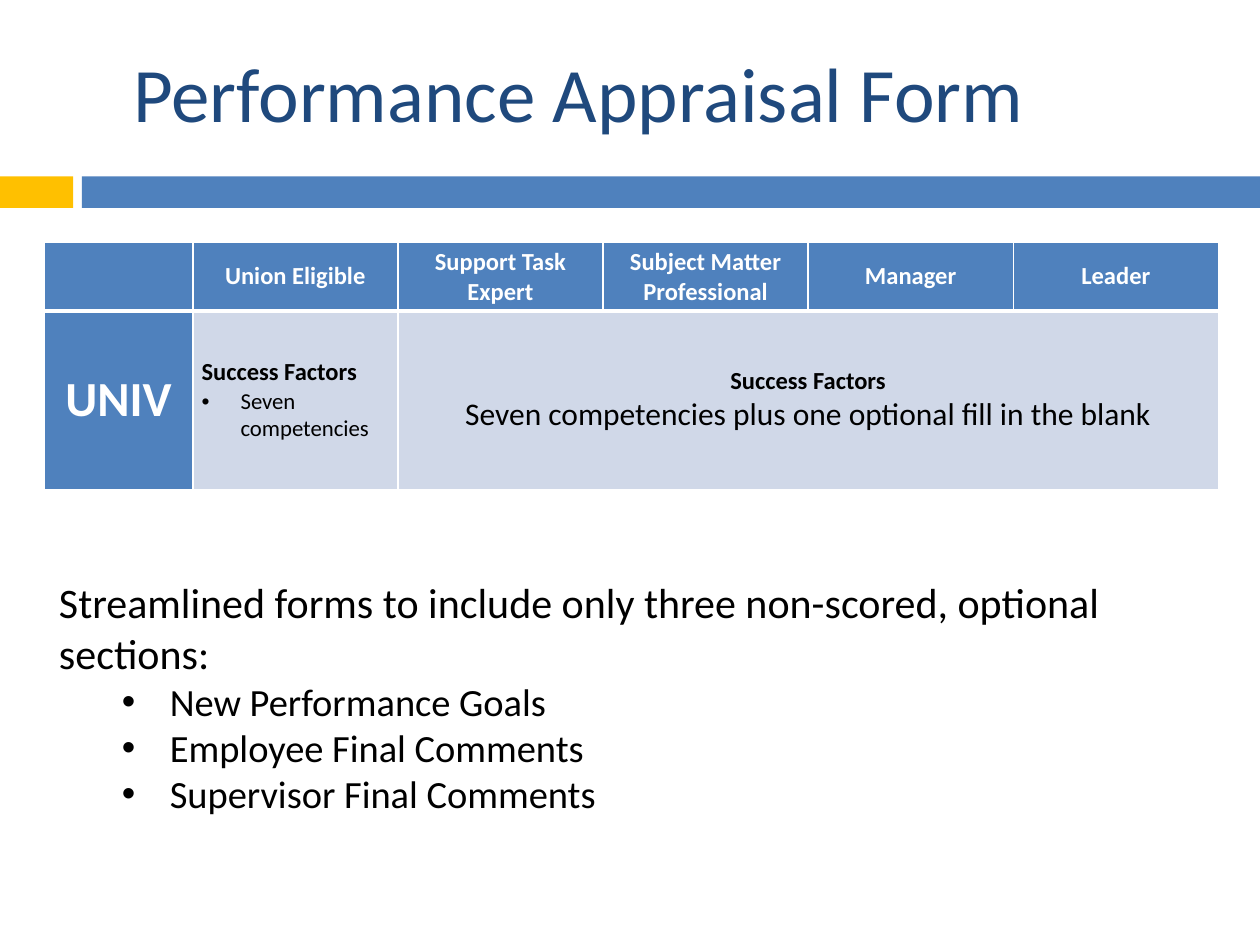
from lxml.etree import SubElement
from pptx import Presentation
from pptx.dml.color import RGBColor
from pptx.enum.shapes import MSO_SHAPE
from pptx.enum.text import MSO_ANCHOR, PP_ALIGN
from pptx.oxml import parse_xml
from pptx.oxml.ns import nsdecls, qn
from pptx.util import Inches, Pt

FONT = "Calibri"
BLUE, GOLD, NAVY, PALE = "4F81BD", "FFC000", "1F497D", "D0D8E8"
WHITE, BLACK = "FFFFFF", "000000"
HEADINGS = ["Union Eligible", "Support Task Expert", "Subject Matter Professional",
            "Manager", "Leader"]
SECTIONS = ["New Performance Goals", "Employee Final Comments", "Supervisor Final Comments"]


def color(hex_string):
    return RGBColor.from_string(hex_string)


def inches(box):
    return [Inches(length) for length in box]


def add_run(paragraph, text, size, hex_string=BLACK, bold=False):
    run = paragraph.add_run()
    run.text = text
    run.font.name = FONT
    run.font.size = Pt(size)
    run.font.bold = bold
    run.font.color.rgb = color(hex_string)


def add_bullet(paragraph, margin, hanging):
    properties = paragraph._p.get_or_add_pPr()
    properties.set("marL", str(Inches(margin)))
    properties.set("indent", str(-Inches(hanging)))
    SubElement(properties, qn("a:buFont"), typeface="Arial")
    SubElement(properties, qn("a:buChar"), char="•")


def add_bands(slide, box):
    """Gold tab and blue band, parted by a narrow gap."""
    left, top, width, height = box
    tab, gap = 0.58, 0.07
    parts = [(left, tab, GOLD), (left + tab + gap, width - tab - gap, BLUE)]
    for part_left, part_width, fill in parts:
        band = slide.shapes.add_shape(
            MSO_SHAPE.RECTANGLE, *inches((part_left, top, part_width, height)))
        band.shadow.inherit = False
        band.fill.solid()
        band.fill.fore_color.rgb = color(fill)
        band.line.fill.background()


def add_text_box(slide, box, anchor=MSO_ANCHOR.TOP):
    frame = slide.shapes.add_textbox(*inches(box)).text_frame
    frame.word_wrap = True
    frame.vertical_anchor = anchor
    return frame


def add_title(slide, box):
    frame = add_text_box(slide, box, MSO_ANCHOR.MIDDLE)
    add_run(frame.paragraphs[0], "Performance Appraisal Form", 44, NAVY)


def style_cell(cell, fill, top=1, bottom=1):
    cell.vertical_anchor = MSO_ANCHOR.MIDDLE
    cell.margin_left = cell.margin_right = Inches(0.07)
    cell.margin_top = cell.margin_bottom = Inches(0.04)
    cell.fill.solid()
    cell.fill.fore_color.rgb = color(fill)
    # Borders come before the fill in the cell properties
    properties = cell._tc.get_or_add_tcPr()
    widths = {"lnL": 1, "lnR": 1, "lnT": top, "lnB": bottom}
    for index, (side, width) in enumerate(widths.items()):
        properties.insert(index, parse_xml(
            f'<a:{side} {nsdecls("a")} w="{Pt(width)}"><a:solidFill>'
            f'<a:srgbClr val="{WHITE}"/></a:solidFill></a:{side}>'))


def add_factors_table(slide, box):
    left, top, width, height = box
    label_width, header_height = 1.18, 0.53
    count = len(HEADINGS) + 1
    table = slide.shapes.add_table(2, count, *inches(box)).table
    for index, column in enumerate(table.columns):
        share = (width - label_width) / len(HEADINGS)
        column.width = Inches(share if index else label_width)
    table.rows[0].height = Inches(header_height)
    table.rows[1].height = Inches(height - header_height)
    for index in range(count):
        style_cell(table.cell(0, index), BLUE, bottom=3)
        style_cell(table.cell(1, index), PALE if index else BLUE, top=3)

    # Header row and row label
    labels = [(0, index, text, 14) for index, text in enumerate(HEADINGS, 1)]
    for row, column, text, size in labels + [(1, 0, "UNIV", 28)]:
        paragraph = table.cell(row, column).text_frame.paragraphs[0]
        paragraph.alignment = PP_ALIGN.CENTER
        add_run(paragraph, text, size, WHITE, bold=True)

    # Union eligible cell
    frame = table.cell(1, 1).text_frame
    add_run(frame.paragraphs[0], "Success Factors", 14, bold=True)
    competencies = frame.add_paragraph()
    add_bullet(competencies, 0.31, 0.31)
    add_run(competencies, "Seven competencies", 13)

    # Merged cell for the other four groups
    merged = table.cell(1, 2)
    merged.merge(table.cell(1, count - 1))
    frame = merged.text_frame
    add_run(frame.paragraphs[0], "Success Factors", 14, bold=True)
    add_run(frame.add_paragraph(),
            "Seven competencies plus one optional fill in the blank", 18)
    for paragraph in frame.paragraphs:
        paragraph.alignment = PP_ALIGN.CENTER


def add_sections(slide, box):
    frame = add_text_box(slide, box)
    add_run(frame.paragraphs[0],
            "Streamlined forms to include only three non-scored, optional sections:", 24)
    for section in SECTIONS:
        paragraph = frame.add_paragraph()
        paragraph.level = 1
        add_bullet(paragraph, 0.88, 0.38)
        add_run(paragraph, section, 22)


def main():
    presentation = Presentation()
    width, height = 10, 7.5
    presentation.slide_width, presentation.slide_height = inches((width, height))
    slide = presentation.slides.add_slide(presentation.slide_layouts[6])
    add_bands(slide, (0, 1.4, width, 0.25))
    add_title(slide, (0.96, 0.17, 8.1, 1.11))
    add_factors_table(slide, (0.35, 1.92, 9.32, 1.95))
    add_sections(slide, (0.37, 4.53, 9.3, 2.02))
    presentation.save("out.pptx")


if __name__ == "__main__":
    main()
